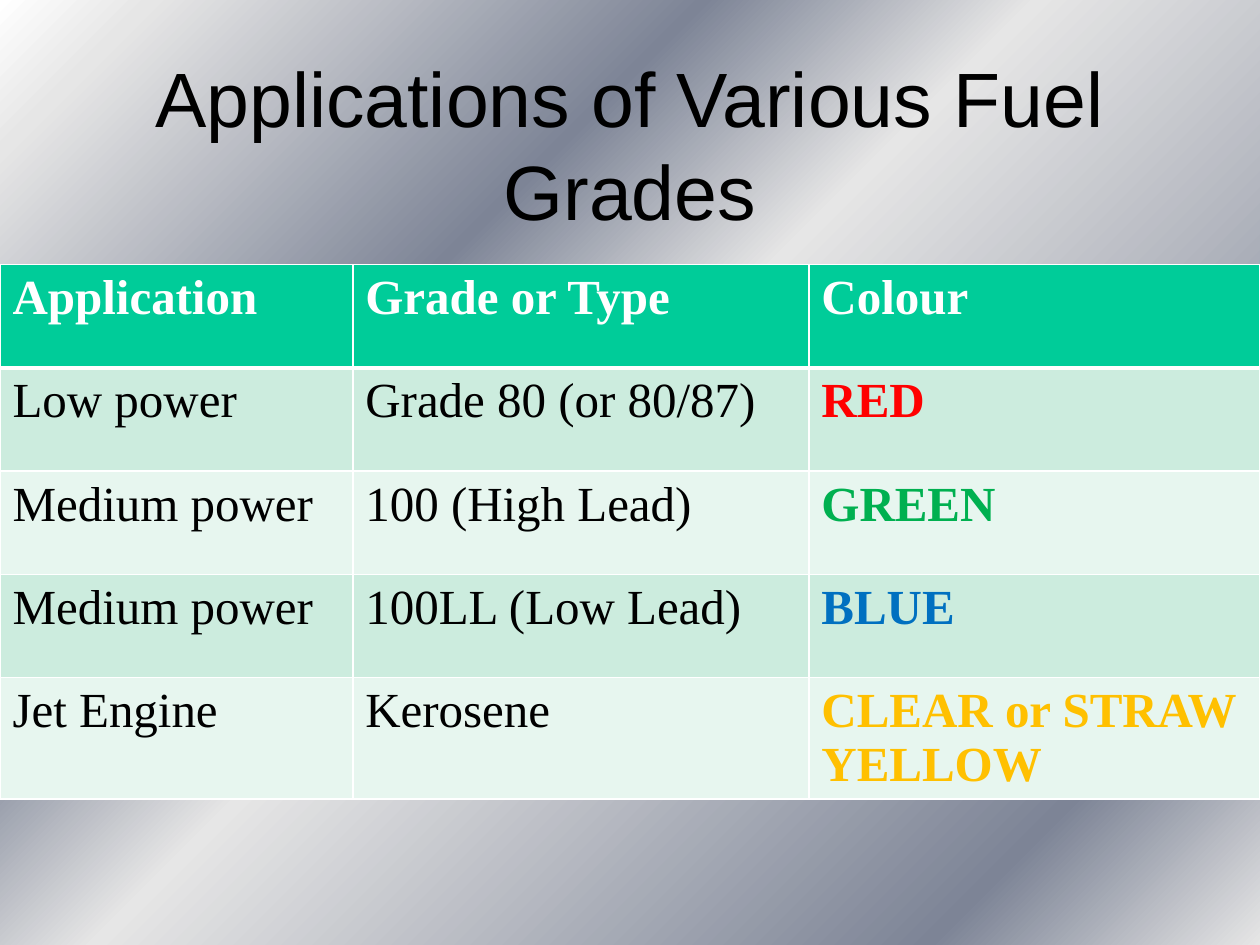
from typing import NamedTuple

from lxml.etree import SubElement
from pptx import Presentation
from pptx.dml.color import RGBColor
from pptx.enum.text import MSO_ANCHOR, MSO_AUTO_SIZE, PP_ALIGN
from pptx.oxml import parse_xml
from pptx.oxml.ns import nsdecls, qn
from pptx.util import Inches, Pt

COLORS = {
    "black": "000000", "white": "FFFFFF", "header": "00CC99",
    "band_dark": "CCECDE", "band_light": "E7F6EF",
    "red": "FF0000", "green": "00B050", "blue": "0070C0", "straw": "FFC000",
    "silver": "E6E6E6", "steel": "7D8496",
}
BACKGROUND_STOPS = [(0, "white"), (7, "silver"), (32, "steel"),
                    (47, "silver"), (85, "steel"), (100, "silver")]
HEADINGS = ("Application", "Grade or Type", "Colour")
COL_WIDTHS = (2.8, 3.62, 3.58)
ROW_HEIGHT = 0.82


class Fuel(NamedTuple):
    application: str
    grade: str
    colour_name: str
    color: str


FUELS = [
    Fuel("Low power", "Grade 80 (or 80/87)", "RED", "red"),
    Fuel("Medium power", "100 (High Lead)", "GREEN", "green"),
    Fuel("Medium power", "100LL (Low Lead)", "BLUE", "blue"),
    Fuel("Jet Engine", "Kerosene", "CLEAR or STRAW YELLOW", "straw"),
]


def rgb(name: str) -> RGBColor:
    return RGBColor.from_string(COLORS[name])


def set_background(s) -> None:
    fill = s.background.fill
    fill.gradient()
    fill.gradient_angle = 315  # counter-clockwise, so 45 degrees downwards
    stops = s.element.find(".//" + qn("a:gsLst"))
    for old in list(stops):
        stops.remove(old)
    for percent, color in BACKGROUND_STOPS:
        stop = SubElement(stops, qn("a:gs"), pos=str(percent * 1000))
        SubElement(stop, qn("a:srgbClr"), val=COLORS[color])


def set_title(s, text: str) -> None:
    title = s.shapes.title
    title.left, title.top = Inches(0.75), Inches(0.67)
    title.width, title.height = Inches(8.5), Inches(1.25)
    tf = title.text_frame
    tf.text = text
    tf.word_wrap = True
    tf.auto_size = MSO_AUTO_SIZE.NONE
    tf.vertical_anchor = MSO_ANCHOR.BOTTOM
    p = tf.paragraphs[0]
    p.alignment = PP_ALIGN.CENTER
    p.font.name, p.font.size = "Arial", Pt(44)
    p.font.color.rgb = rgb("black")


def set_borders(cell, top: float = 1, bottom: float = 1) -> None:
    """Draw white cell borders; widths are in points."""
    tc_pr = cell._tc.get_or_add_tcPr()
    widths = {"L": 1, "R": 1, "T": top, "B": bottom}
    for i, (side, width) in enumerate(widths.items()):
        tc_pr.insert(i, parse_xml(
            f'<a:ln{side} {nsdecls("a")} w="{Pt(width)}"><a:solidFill>'
            f'<a:srgbClr val="{COLORS["white"]}"/></a:solidFill></a:ln{side}>'))


def set_cell(cell, text: str, color: str, fill: str, bold: bool) -> None:
    cell.text = text
    cell.fill.solid()
    cell.fill.fore_color.rgb = rgb(fill)
    font = cell.text_frame.paragraphs[0].font
    font.name, font.size, font.bold = "Times New Roman", Pt(28), bold
    font.color.rgb = rgb(color)


def add_fuel_table(s) -> None:
    n_rows = len(FUELS) + 1
    table = s.shapes.add_table(
        n_rows, len(HEADINGS), Inches(0), Inches(2.1),
        Inches(sum(COL_WIDTHS)), Inches(ROW_HEIGHT * n_rows)).table
    for col, width in zip(table.columns, COL_WIDTHS):
        col.width = Inches(width)
    for row in table.rows:
        row.height = Inches(ROW_HEIGHT)

    for c, heading in enumerate(HEADINGS):
        cell = table.cell(0, c)
        set_cell(cell, heading, "white", "header", bold=True)
        set_borders(cell, bottom=3)
    for r, fuel in enumerate(FUELS, start=1):
        band = "band_dark" if r % 2 else "band_light"
        for c, text in enumerate(fuel[:3]):
            is_colour = c == 2
            cell = table.cell(r, c)
            set_cell(cell, text, fuel.color if is_colour else "black",
                     band, bold=is_colour)
            set_borders(cell, top=3 if r == 1 else 1)


def main() -> None:
    prs = Presentation()
    prs.slide_width, prs.slide_height = Inches(10), Inches(7.5)
    s = prs.slides.add_slide(prs.slide_layouts[5])
    set_background(s)
    set_title(s, "Applications of Various Fuel Grades")
    add_fuel_table(s)
    prs.save("out.pptx")


if __name__ == "__main__":
    main()
